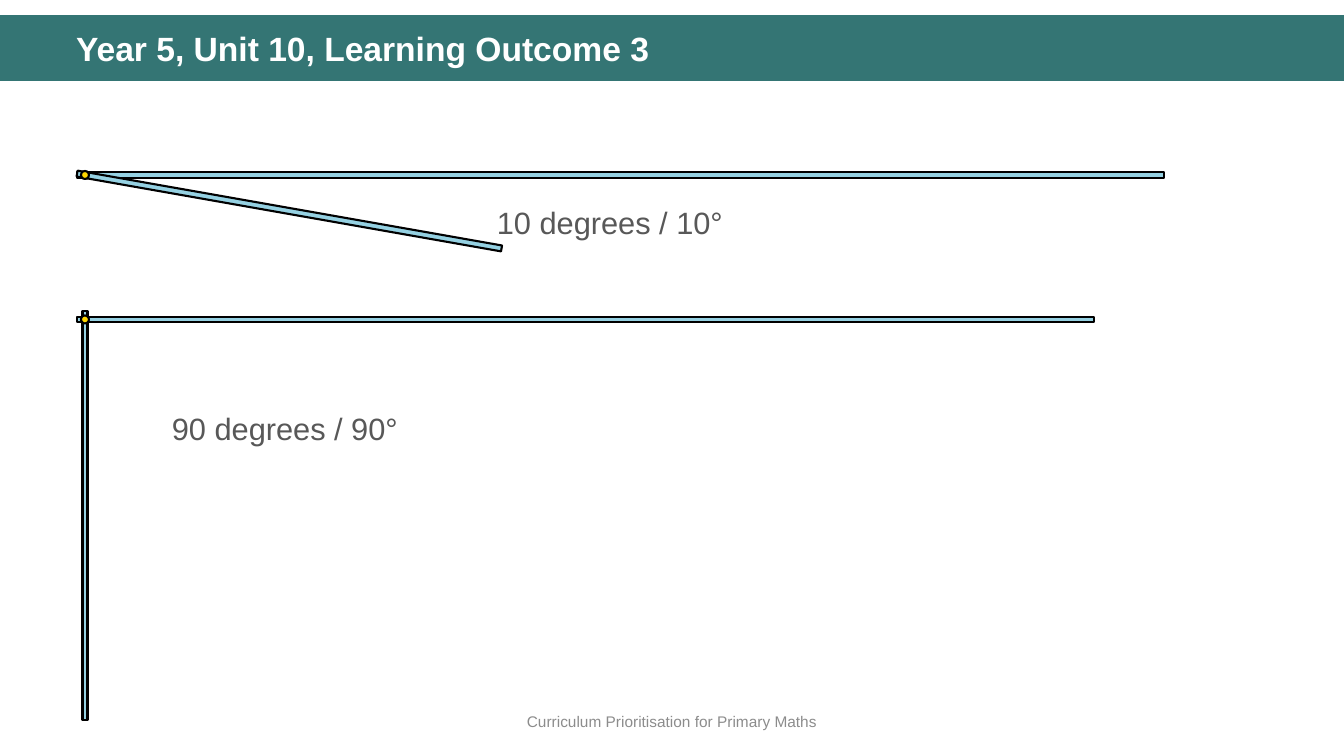
"""Build a slide showing a 10 degree and a 90 degree angle made from hinged strips."""
from math import cos, radians, sin

from pptx import Presentation
from pptx.dml.color import RGBColor
from pptx.enum.shapes import MSO_SHAPE
from pptx.enum.text import MSO_ANCHOR, MSO_AUTO_SIZE, PP_ALIGN
from pptx.util import Emu, Pt

RECTANGLE, OVAL = MSO_SHAPE.RECTANGLE, MSO_SHAPE.OVAL
TOP, MIDDLE = MSO_ANCHOR.TOP, MSO_ANCHOR.MIDDLE
LEFT, CENTER = PP_ALIGN.LEFT, PP_ALIGN.CENTER
NO_AUTOFIT = MSO_AUTO_SIZE.NONE

TEAL = RGBColor(0x34, 0x75, 0x74)
WHITE = RGBColor(0xFF, 0xFF, 0xFF)
BLACK = RGBColor(0x00, 0x00, 0x00)
SKY = RGBColor(0x95, 0xD1, 0xE2)
GOLD = RGBColor(0xFF, 0xD7, 0x00)
DARK_GREY = RGBColor(0x58, 0x58, 0x58)
MID_GREY = RGBColor(0x8C, 0x8C, 0x8C)

EMU_PER_PX = 914400 / 100.8
SLIDE_WIDTH, SLIDE_HEIGHT = 1344, 756
OVERHANG = 8
PIVOT_SIZE = 8

TITLE_FORMAT = {"size": Pt(24), "bold": True}
LABEL_FORMAT = {"size": Pt(22), "bold": False}
FOOTER_FORMAT = {"size": Pt(11), "bold": False}


def px(length):
    """Turn a length in px into EMU."""
    return Emu(round(length * EMU_PER_PX))


def write_text(shape, text, font_format, color, anchor=TOP, alignment=LEFT, line_spacing=1.0):
    """Fill a shape with one formatted paragraph."""
    frame = shape.text_frame
    frame.text = text
    frame_format = {"word_wrap": True, "auto_size": NO_AUTOFIT, "vertical_anchor": anchor}
    for name, value in frame_format.items():
        setattr(frame, name, value)
    paragraph = frame.paragraphs[0]
    paragraph_format = {"alignment": alignment, "line_spacing": line_spacing, "space_before": Pt(0)}
    for name, value in paragraph_format.items():
        setattr(paragraph, name, value)
    font = paragraph.runs[0].font
    for name, value in {"name": "Arial", **font_format}.items():
        setattr(font, name, value)
    font.color.rgb = color


def add_text(slide, box, text, font_format, color, **text_options):
    """Add a text box holding one paragraph."""
    text_box = slide.shapes.add_textbox(*map(px, box))
    write_text(text_box, text, font_format, color, **text_options)


def add_filled_shape(slide, kind, box, fill, outlined=True):
    """Add a flat shape, outlined in black unless told otherwise."""
    shape = slide.shapes.add_shape(kind, *map(px, box))
    shape.shadow.inherit = False
    shape.fill.solid()
    shape.fill.fore_color.rgb = fill
    if outlined:
        shape.line.color.rgb = BLACK
        shape.line.width = Pt(1.5)
    else:
        shape.line.fill.background()
    return shape


def add_header(slide, box):
    """Place the title on a full-width band."""
    left, top, width, height = box
    band = add_filled_shape(slide, RECTANGLE, box, TEAL, outlined=False)
    title = slide.shapes.title
    title.element.addprevious(band.element)
    title_box = {"left": left + 66, "top": top + 12, "width": width - 102, "height": height - 19}
    for name, value in title_box.items():
        setattr(title, name, px(value))
    write_text(title, "Year 5, Unit 10, Learning Outcome 3", TITLE_FORMAT, WHITE, line_spacing=0.9)


def add_strip(slide, pivot, length, thickness, angle):
    """Add a strip that turns clockwise about the pivot, overhanging it a little."""
    reach = length / 2 - OVERHANG
    center_x = pivot[0] + reach * cos(radians(angle))
    center_y = pivot[1] + reach * sin(radians(angle))
    box = (center_x - length / 2, center_y - thickness / 2, length, thickness)
    strip = add_filled_shape(slide, RECTANGLE, box, SKY)
    strip.rotation = angle


def add_angle(slide, box, thickness, arm_length, angle, label_offset):
    """Draw a hinged pair of strips and its label from the top left of a box."""
    left, top, base_length, label_height = box
    pivot = (left + OVERHANG, top + thickness / 2)
    add_strip(slide, pivot, base_length, thickness, 0)
    add_strip(slide, pivot, arm_length, thickness, angle)
    radius = PIVOT_SIZE / 2
    pivot_box = (pivot[0] - radius, pivot[1] - radius, PIVOT_SIZE, PIVOT_SIZE)
    add_filled_shape(slide, OVAL, pivot_box, GOLD)
    label_box = (left + label_offset[0], top + label_offset[1], 445, label_height)
    add_text(slide, label_box, f"{angle} degrees / {angle}°", LABEL_FORMAT, DARK_GREY,
             line_spacing=1.2)


def main():
    """Build and save the slide."""
    presentation = Presentation()
    presentation.slide_width = px(SLIDE_WIDTH)
    presentation.slide_height = px(SLIDE_HEIGHT)
    slide = presentation.slides.add_slide(presentation.slide_layouts[5])
    add_header(slide, (0, 15, SLIDE_WIDTH, 66))
    add_text(slide, (0, 701, SLIDE_WIDTH, 40), "Curriculum Prioritisation for Primary Maths",
             FOOTER_FORMAT, MID_GREY, anchor=MIDDLE, alignment=CENTER)
    add_angle(slide, (77, 172, 1087, 77), 6, 431, 10, (410, 19))
    add_angle(slide, (77, 317, 1017, 77), 5, 409, 90, (85, 80))
    presentation.save("out.pptx")


if __name__ == "__main__":
    main()
